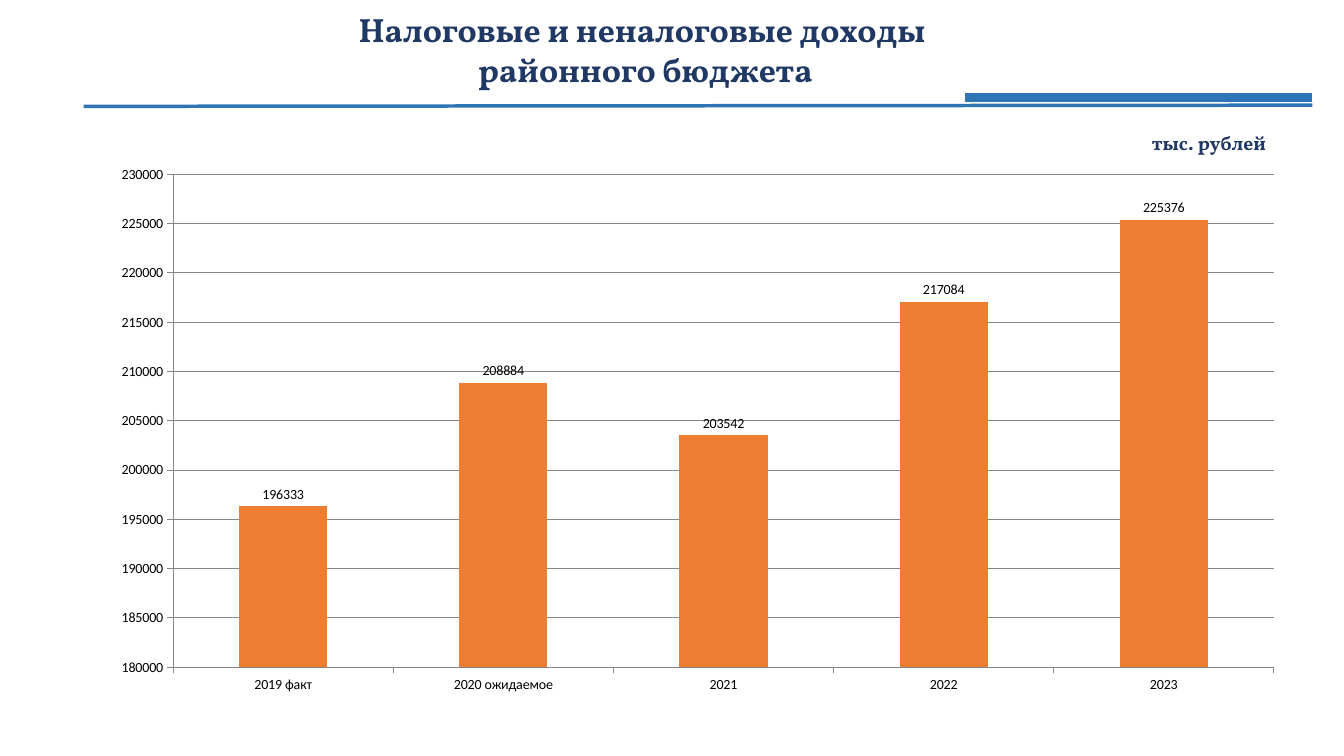
from lxml.etree import SubElement
from pptx import Presentation
from pptx.chart.data import CategoryChartData
from pptx.dml.color import RGBColor
from pptx.enum.chart import XL_CHART_TYPE, XL_LABEL_POSITION, XL_TICK_MARK
from pptx.enum.shapes import MSO_CONNECTOR
from pptx.enum.text import MSO_ANCHOR, MSO_AUTO_SIZE, PP_ALIGN
from pptx.oxml.ns import qn
from pptx.util import Cm, Pt

COLORS = {"heading": "203864", "rule": "2E75B6", "bar": "ED7D31",
          "grid": "868686", "text": "000000"}
REVENUES = {"2019 факт": 196333, "2020 ожидаемое": 208884, "2021": 203542,
            "2022": 217084, "2023": 225376}


class BudgetSlide:
    """Holds the style and the current slide, and draws its elements."""

    heading_font = "Vollkorn"
    chart_font = "Calibri"

    def __init__(self, presentation):
        self.slide = presentation.slides.add_slide(presentation.slide_layouts[5])

    def color(self, name):
        return RGBColor.from_string(COLORS[name])

    def fill_text(self, shape, lines, size, alignment, anchor):
        frame = shape.text_frame
        frame.word_wrap = True
        frame.auto_size = MSO_AUTO_SIZE.NONE
        frame.vertical_anchor = anchor
        paragraph = frame.paragraphs[0]
        paragraph.alignment = alignment
        for index, line in enumerate(lines):
            if index:
                paragraph.add_line_break()
            run = paragraph.add_run()
            run.text = line
            run.font.name = self.heading_font
            run.font.size = Pt(size)
            run.font.bold = True
            run.font.color.rgb = self.color("heading")

    def title(self, lines, left, top, width, height):
        shape = self.slide.shapes.title
        shape.left, shape.top = Cm(left), Cm(top)
        shape.width, shape.height = Cm(width), Cm(height)
        self.fill_text(shape, lines, 24, PP_ALIGN.CENTER, MSO_ANCHOR.MIDDLE)

    def unit_label(self, text, left, top, width, height):
        shape = self.slide.shapes.add_textbox(Cm(left), Cm(top), Cm(width), Cm(height))
        self.fill_text(shape, [text], 14, PP_ALIGN.RIGHT, MSO_ANCHOR.TOP)

    def rule(self, start, end, weight):
        connector = self.slide.shapes.add_connector(
            MSO_CONNECTOR.STRAIGHT, *map(Cm, start + end))
        connector.line.color.rgb = self.color("rule")
        connector.line.width = Pt(weight)
        SubElement(connector._element.spPr, qn("a:effectLst"))

    def style_line(self, line):
        line.color.rgb = self.color("grid")
        line.width = Pt(0.75)

    def column_chart(self, values, left, top, width, height):
        data = CategoryChartData()
        data.categories = list(values)
        data.add_series("Доходы", list(values.values()))
        chart = self.slide.shapes.add_chart(
            XL_CHART_TYPE.COLUMN_CLUSTERED,
            Cm(left), Cm(top), Cm(width), Cm(height), data).chart
        chart.has_legend = False
        chart.has_title = False
        chart.font.name = self.chart_font
        chart.font.size = Pt(10)
        chart.font.color.rgb = self.color("text")

        for axis in (chart.category_axis, chart.value_axis):
            axis.major_tick_mark = XL_TICK_MARK.OUTSIDE
            axis.minor_tick_mark = XL_TICK_MARK.NONE
            self.style_line(axis.format.line)
        value_axis = chart.value_axis
        value_axis.minimum_scale = 180000
        value_axis.maximum_scale = 230000
        value_axis.major_unit = 5000
        value_axis.has_major_gridlines = True
        self.style_line(value_axis.major_gridlines.format.line)

        plot = chart.plots[0]
        plot.vary_by_categories = False
        plot.gap_width = 150
        plot.has_data_labels = True
        plot.data_labels.show_value = True
        plot.data_labels.position = XL_LABEL_POSITION.OUTSIDE_END
        fill = plot.series[0].format.fill
        fill.solid()
        fill.fore_color.rgb = self.color("bar")


def main():
    presentation = Presentation()
    presentation.slide_width = Cm(33.87)
    presentation.slide_height = Cm(19.05)
    budget = BudgetSlide(presentation)
    budget.title(["Налоговые и неналоговые доходы ", "районного бюджета"],
                 1.02, 0.08, 30.48, 2.31)
    budget.unit_label("тыс. рублей", 27.76, 3.18, 4.4, 0.86)
    budget.rule((2.11, 2.68), (33.07, 2.65), 2.5)
    budget.rule((24.31, 2.46), (33.07, 2.46), 6)
    budget.column_chart(REVENUES, 2.46, 3.92, 30.25, 13.82)
    presentation.save("out.pptx")


if __name__ == "__main__":
    main()
